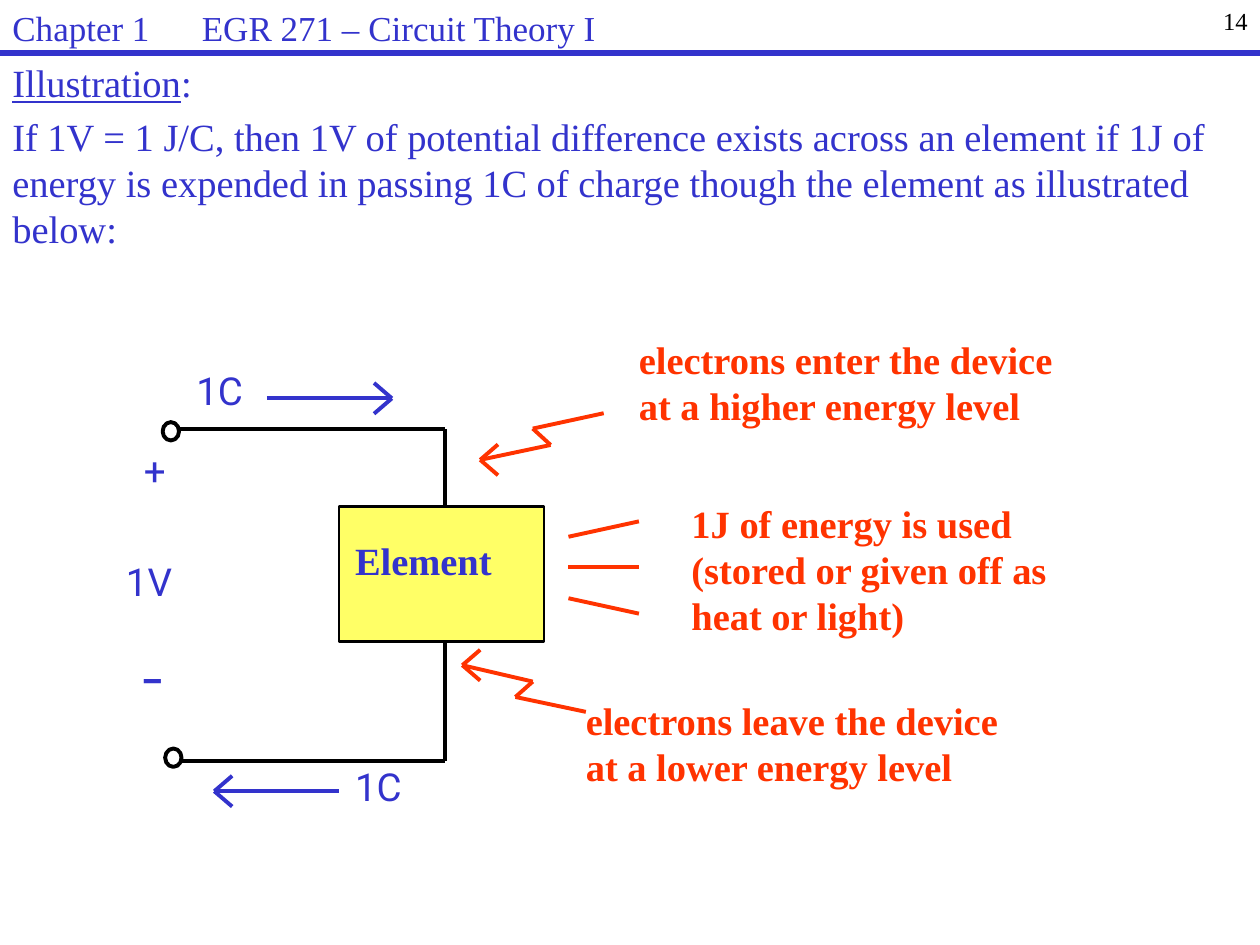
from dataclasses import dataclass
from itertools import pairwise

from lxml import etree
from pptx import Presentation
from pptx import util as u
from pptx.dml.color import RGBColor
from pptx.enum import shapes, text
from pptx.oxml import ns


@dataclass(frozen=True)
class Theme:
    blue: RGBColor = RGBColor(0x33, 0x33, 0xCC)
    red: RGBColor = RGBColor(0xFF, 0x33, 0x00)
    yellow: RGBColor = RGBColor(0xFF, 0xFF, 0x66)
    black: RGBColor = RGBColor(0, 0, 0)
    white: RGBColor = RGBColor(0xFF, 0xFF, 0xFF)
    serif: str = "Times New Roman"
    sans: str = "Roboto"
    body: float = 22
    header: float = 20
    number: float = 14
    stroke: float = 2.25
    border: float = 1.35
    rule: float = 3


T = Theme()
LINE_H = 0.94  # height of one label line, cm
BARB_X, BARB_Y = 0.36, 0.31  # reach of an arrowhead's barbs, cm


def set_font(p, font, size, color, bold=False):
    p.font.name = font
    p.font.size = u.Pt(size)
    p.font.color.rgb = color
    p.font.bold = bold


def add_text(s, x, y, w, h, lines, size=T.body, color=T.blue):
    """Wrapping text box with default insets; returns its paragraphs."""
    tf = s.shapes.add_textbox(u.Cm(x), u.Cm(y), u.Cm(w), u.Cm(h)).text_frame
    tf.word_wrap = True
    tf.text = "\n".join(lines)
    for p in tf.paragraphs:
        set_font(p, T.serif, size, color)
    return tf.paragraphs


def add_label(s, x, y, w, lines, font=T.sans, color=T.blue, bold=False):
    """Diagram label without insets, one paragraph per line."""
    sp = s.shapes.add_textbox(u.Cm(x), u.Cm(y), u.Cm(w), u.Cm(LINE_H * len(lines)))
    tf = sp.text_frame
    tf.margin_left = tf.margin_right = tf.margin_top = tf.margin_bottom = 0
    tf.word_wrap = False
    tf.auto_size = text.MSO_AUTO_SIZE.SHAPE_TO_FIT_TEXT
    tf.text = "\n".join(lines)
    for p in tf.paragraphs:
        set_font(p, font, T.body, color, bold)


def add_shape(s, kind, x, y, w, h, fill, width):
    sp = s.shapes.add_shape(kind, u.Cm(x), u.Cm(y), u.Cm(w), u.Cm(h))
    sp.shadow.inherit = False
    sp.fill.solid()
    sp.fill.fore_color.rgb = fill
    sp.line.color.rgb = T.black
    sp.line.width = u.Pt(width)


def add_path(s, points, color, width=T.stroke):
    """Straight connectors through the points."""
    for start, end in pairwise(points):
        c = s.shapes.add_connector(
            shapes.MSO_CONNECTOR.STRAIGHT, *(u.Cm(v) for v in (*start, *end)))
        c.line.color.rgb = color
        c.line.width = u.Pt(width)
        etree.SubElement(c._element.spPr, ns.qn("a:effectLst"))


def add_arrow(s, points, color):
    """Path ending in an open head that points left or right."""
    add_path(s, points, color)
    (prev_x, _), (x, y) = points[-2:]
    back = x - BARB_X if x > prev_x else x + BARB_X
    add_path(s, [(back, y - BARB_Y), (x, y), (back, y + BARB_Y)], color)


def add_header(s):
    [p] = add_text(s, 0, 0, 13.97, 0.84,
                   ["Chapter 1\tEGR 271 – Circuit Theory I"], T.header)
    tabs = etree.SubElement(p._p.get_or_add_pPr(), ns.qn("a:tabLst"))
    etree.SubElement(tabs, ns.qn("a:tab"), pos=str(u.Cm(3.82)), algn="l")
    [p] = add_text(s, 20.12, 0, 5.28, 1.07, ["14"], T.number, T.black)
    p.alignment = text.PP_ALIGN.RIGHT
    add_path(s, [(0, 1.07), (25.4, 1.07)], T.blue, T.rule)


def add_body(s):
    title, statement = add_text(s, 0, 1.07, 25.4, 4.24, [
        "",
        "If 1V = 1 J/C, then 1V of potential difference exists across an element "
        "if 1J of energy is expended in passing 1C of charge though the element "
        "as illustrated below:"])
    word, colon = title.add_run(), title.add_run()
    word.text, colon.text = "Illustration", ":"
    word.font.underline = True
    statement.space_before = u.Pt(T.body * 0.2)


def add_circuit(s):
    # Element and its wires
    add_shape(s, shapes.MSO_SHAPE.RECTANGLE, 6.83, 10.21, 4.14, 2.72, T.yellow, T.border)
    add_path(s, [(8.97, 10.19), (8.97, 8.64), (3.61, 8.64)], T.black)
    add_path(s, [(8.97, 12.93), (8.97, 15.34), (3.61, 15.34)], T.black)
    # Terminals
    for x, y in ((3.28, 8.51), (3.33, 15.09)):
        add_shape(s, shapes.MSO_SHAPE.OVAL, x, y, 0.33, 0.37, T.white, T.stroke)
    # Voltage and charge labels
    add_label(s, 2.54, 11.25, 0.97, ["1V"])
    add_label(s, 2.9, 9.02, 0.46, ["+"])
    add_label(s, 2.9, 12.93, 0.43, ["_"], bold=True)
    add_label(s, 7.16, 10.82, 2.79, ["Element"], T.serif, bold=True)
    add_label(s, 3.96, 7.39, 0.99, ["1C"])
    add_label(s, 7.16, 15.39, 0.99, ["1C"])
    # Charge flow
    add_arrow(s, [(5.38, 8.03), (7.9, 8.03)], T.blue)
    add_arrow(s, [(6.83, 15.95), (4.32, 15.95)], T.blue)


def add_energy_notes(s):
    # Zigzag arrows towards the wires
    add_arrow(s, [(12.17, 8.33), (10.74, 8.64), (11.1, 8.97), (9.68, 9.27)], T.red)
    add_arrow(s, [(11.81, 14.35), (10.39, 14.05), (10.74, 13.74), (9.32, 13.41)], T.red)
    # Rays leaving the element
    for y, slope in ((10.82, -0.31), (11.43, 0), (12.06, 0.31)):
        add_path(s, [(11.46, y), (12.88, y + slope)], T.red)
    # Notes
    for x, y, w, lines in (
        (12.88, 6.78, 8.43, ["electrons enter the device", "at a higher energy level"]),
        (13.94, 10.08, 7.24,
         ["1J of energy is used", "(stored or given off as", "heat or light)"]),
        (11.81, 14.05, 8.41, ["electrons leave the device", "at a lower energy level"]),
    ):
        add_label(s, x, y, w, lines, T.serif, T.red, bold=True)


def main():
    prs = Presentation()
    prs.slide_width, prs.slide_height = u.Cm(25.4), u.Cm(19.05)
    s = prs.slides.add_slide(prs.slide_layouts[6])
    add_body(s)
    add_circuit(s)
    add_energy_notes(s)
    add_header(s)
    prs.save("out.pptx")


if __name__ == "__main__":
    main()
